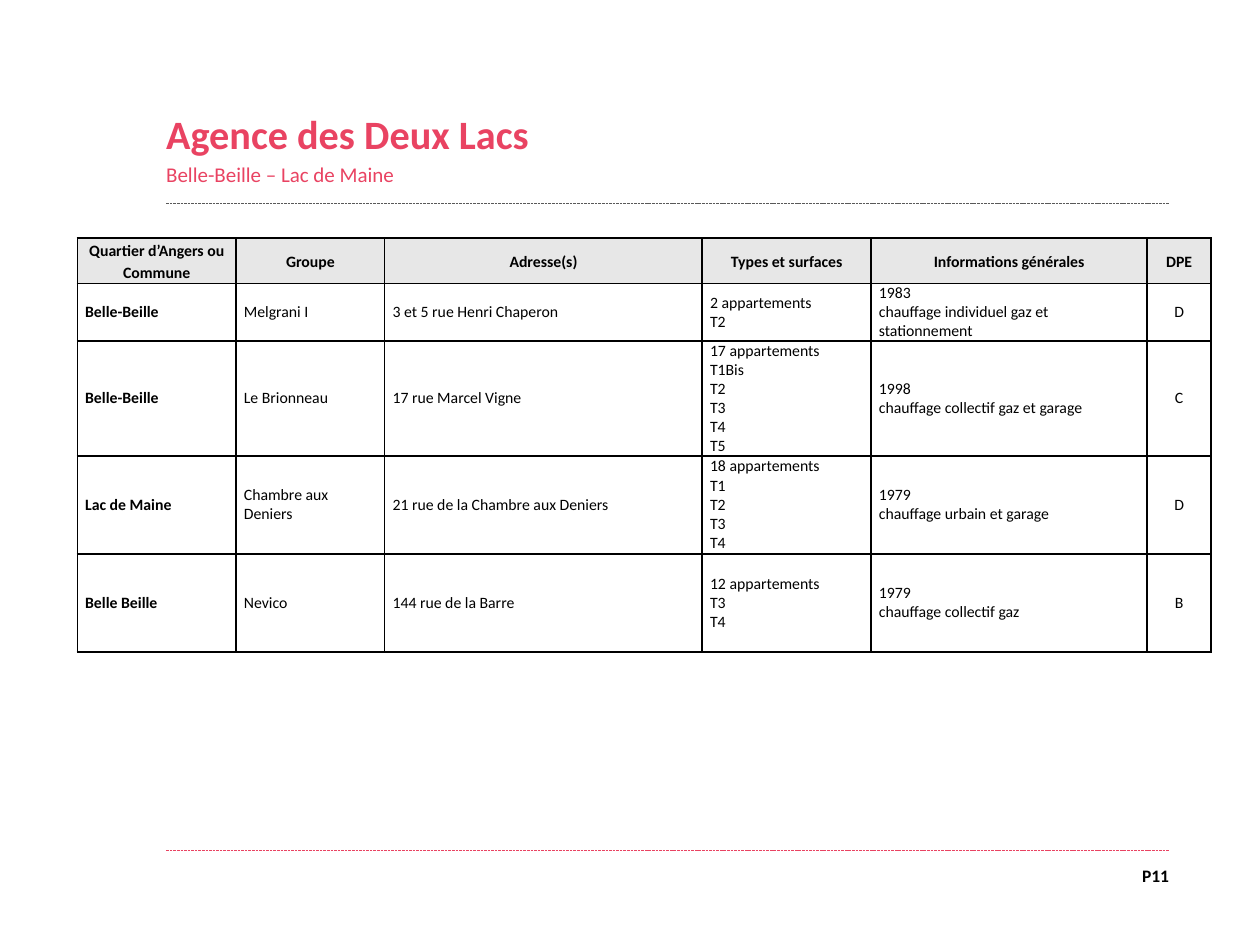
from lxml import etree
from pptx import Presentation
from pptx.dml.color import RGBColor
from pptx.enum import dml, shapes, text
from pptx.oxml import ns
from pptx.util import Pt

COLORS = {"accent": "E94362", "rule": "595959", "ink": "000000", "header": "E7E7E7"}
FONT = "Calibri"
LEFT, RIGHT = 95, 668
COLUMN_WIDTHS = [90.7, 85, 181.4, 96.5, 157.7, 36.7]
ROW_HEIGHTS = [26, 33, 65.5, 56, 56]
HEADINGS = ["Quartier d’Angers ou Commune", "Groupe", "Adresse(s)",
            "Types et surfaces", "Informations générales", "DPE"]
RESIDENCES = [
    ["Belle-Beille", "Melgrani I", "3 et 5 rue Henri Chaperon",
     "2 appartements\nT2",
     "1983\nchauffage individuel gaz et stationnement", "D"],
    ["Belle-Beille", "Le Brionneau", "17 rue Marcel Vigne",
     "17 appartements\nT1Bis\nT2\nT3\nT4\nT5",
     "1998\nchauffage collectif gaz et garage", "C"],
    ["Lac de Maine", "Chambre aux Deniers", "21 rue de la Chambre aux Deniers",
     "18 appartements\nT1\nT2\nT3\nT4",
     "1979\nchauffage urbain et garage", "D"],
    ["Belle Beille", "Nevico", "144 rue de la Barre",
     "12 appartements\nT3\nT4",
     "1979\nchauffage collectif gaz", "B"],
]


def rgb(name):
    return RGBColor.from_string(COLORS[name])


def add_run(paragraph, wording, size, color="ink", bold=False):
    run = paragraph.add_run()
    run.text = wording
    run.font.name = FONT
    run.font.size = Pt(size)
    run.font.bold = bold
    run.font.color.rgb = rgb(color)


def add_frame(slide, left, top, width, height):
    frame = slide.shapes.add_textbox(Pt(left), Pt(top), Pt(width), Pt(height)).text_frame
    frame.word_wrap = True
    frame.margin_left = frame.margin_right = frame.margin_top = frame.margin_bottom = 0
    return frame


def add_rule(slide, left, right, y, color):
    rule = slide.shapes.add_connector(
        shapes.MSO_CONNECTOR.STRAIGHT, Pt(left), Pt(y), Pt(right), Pt(y))
    rule.line.color.rgb = rgb(color)
    rule.line.width = Pt(0.5)
    rule.line.dash_style = dml.MSO_LINE.SQUARE_DOT
    etree.SubElement(rule._element.spPr, ns.qn("a:effectLst"))


def add_heading(slide, left, top, width, height):
    frame = add_frame(slide, left, top, width, height)
    frame.vertical_anchor = text.MSO_ANCHOR.BOTTOM
    add_run(frame.paragraphs[0], "Agence des Deux Lacs", 23, "accent", True)
    districts = frame.add_paragraph()
    districts.space_before = Pt(2.4)
    add_run(districts, "Belle-Beille – Lac de Maine", 12, "accent")


def add_page_number(slide, left, top, width, height):
    page = add_frame(slide, left, top, width, height).paragraphs[0]
    page.alignment = text.PP_ALIGN.RIGHT
    add_run(page, "P11", 10, bold=True)


def add_borders(cell):
    properties = cell._tc.get_or_add_tcPr()
    for index, side in enumerate(("a:lnL", "a:lnR", "a:lnT", "a:lnB")):
        border = etree.Element(ns.qn(side), w=str(Pt(1)))
        fill = etree.SubElement(border, ns.qn("a:solidFill"))
        etree.SubElement(fill, ns.qn("a:srgbClr"), val=COLORS["ink"])
        properties.insert(index, border)


def fill_cell(cell, wording, is_header, bold, centered):
    cell.margin_left = cell.margin_right = Pt(4.5)
    cell.margin_top = cell.margin_bottom = 0
    cell.vertical_anchor = text.MSO_ANCHOR.MIDDLE
    if is_header:
        cell.fill.solid()
        cell.fill.fore_color.rgb = rgb("header")
    else:
        cell.fill.background()
    add_borders(cell)
    frame = cell.text_frame
    for index, line in enumerate(wording.split("\n")):
        paragraph = frame.add_paragraph() if index else frame.paragraphs[0]
        paragraph.alignment = text.PP_ALIGN.CENTER if centered else text.PP_ALIGN.LEFT
        if is_header:
            paragraph.line_spacing = 1.15
        add_run(paragraph, line, 9, bold=bold)


def add_residences(slide, left, top):
    rows = [HEADINGS] + RESIDENCES
    table = slide.shapes.add_table(
        len(rows), len(HEADINGS), Pt(left), Pt(top),
        Pt(sum(COLUMN_WIDTHS)), Pt(sum(ROW_HEIGHTS))).table
    table.horz_banding = False
    for column, width in zip(table.columns, COLUMN_WIDTHS):
        column.width = Pt(width)
    for row, height in zip(table.rows, ROW_HEIGHTS):
        row.height = Pt(height)
    for r, row in enumerate(rows):
        for c, wording in enumerate(row):
            is_header = r == 0
            fill_cell(table.cell(r, c), wording, is_header,
                      bold=is_header or c == 0,
                      centered=is_header or c == len(HEADINGS) - 1)


def main():
    deck = Presentation()
    deck.slide_width, deck.slide_height = Pt(720), Pt(540)
    slide = deck.slides.add_slide(deck.slide_layouts[6])
    add_rule(slide, LEFT, RIGHT, 116, "rule")
    add_rule(slide, LEFT, RIGHT, 486, "accent")
    add_page_number(slide, RIGHT - 24.5, 494.6, 24.5, 14.4)
    add_heading(slide, LEFT, 52.6, 449.3, 54)
    add_residences(slide, 44.2, 136)
    deck.save("out.pptx")


if __name__ == "__main__":
    main()
